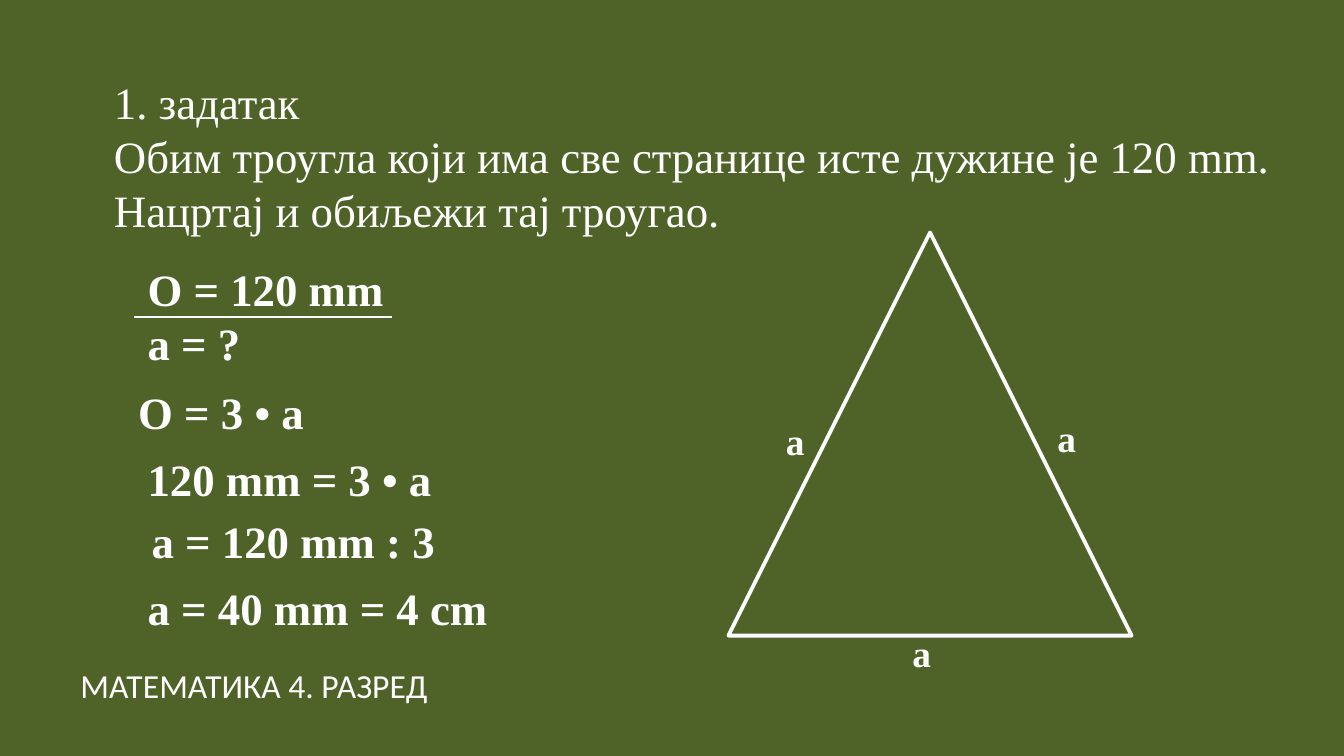
from dataclasses import dataclass

import pptx
import pptx.dml.color
import pptx.enum.shapes
import pptx.oxml.ns
import pptx.slide
import pptx.util
from lxml import etree

Inches = pptx.util.Inches
Pt = pptx.util.Pt
GREEN = pptx.dml.color.RGBColor(0x4F, 0x62, 0x28)
WHITE = pptx.dml.color.RGBColor(0xFF, 0xFF, 0xFF)


@dataclass(frozen=True)
class Note:
    left: float
    top: float
    width: float
    height: float
    lines: tuple[str, ...]
    size: int = 24
    bold: bool = True
    font: str = "Times New Roman"
    lead: float = 1.0


TASK = Note(
    0.75, 0.31, 8.83, 1.51,
    (
        "1. задатак",
        "Обим троугла који има све странице исте дужине је 120 mm. "
        "Нацртај и обиљежи тај троугао.",
    ),
    bold=False,
    lead=1.5,
)
GIVEN = Note(1, 1.9, 2.17, 0.91, ("O = 120 mm", "a = ?"))
STEPS = [
    Note(0.93, 2.81, 2.33, 0.5, ("O = 3 • a",)),
    Note(1, 3.31, 2.33, 0.5, ("120 mm = 3 • a",)),
    Note(1.03, 3.77, 2.5, 0.5, ("a = 120 mm : 3",)),
    Note(1, 4.27, 2.75, 0.5, ("a = 40 mm = 4 cm",)),
]
SIDES = [
    Note(left, top, 0.46, 0.44, ("a",), size=20)
    for left, top in ((5.75, 3.06), (7.77, 3.04), (6.69, 4.64))
]
FOOTER = Note(
    0.5, 4.9, 4.42, 0.42, ("МАТЕМАТИКА 4. РАЗРЕД",),
    size=18, bold=False, font="Calibri",
)


def add_notes(slide: pptx.slide.Slide, *notes: Note) -> None:
    for note in notes:
        box = slide.shapes.add_textbox(
            Inches(note.left), Inches(note.top),
            Inches(note.width), Inches(note.height),
        )
        frame = box.text_frame
        frame.word_wrap = True
        frame.text = "\n".join(note.lines)
        for para in frame.paragraphs:
            para.font.name = note.font
            para.font.size = Pt(note.size)
            para.font.bold = note.bold
            para.font.color.rgb = WHITE
        frame.paragraphs[0].line_spacing = note.lead


def add_rule(slide: pptx.slide.Slide, left: float, right: float, top: float) -> None:
    rule = slide.shapes.add_connector(
        pptx.enum.shapes.MSO_CONNECTOR.STRAIGHT,
        Inches(left), Inches(top), Inches(right), Inches(top),
    )
    rule.line.color.rgb = WHITE
    rule.line.width = Pt(0.75)
    etree.SubElement(rule._element.spPr, pptx.oxml.ns.qn("a:effectLst"))


def add_triangle(slide: pptx.slide.Slide, left: float, top: float, side: float) -> None:
    shape = slide.shapes.add_shape(
        pptx.enum.shapes.MSO_SHAPE.FLOWCHART_EXTRACT,
        Inches(left), Inches(top), Inches(side), Inches(side),
    )
    shape.shadow.inherit = False
    shape.fill.background()
    shape.line.color.rgb = WHITE
    shape.line.width = Pt(2)


def main() -> None:
    deck = pptx.Presentation()
    deck.slide_width = Inches(10)
    deck.slide_height = deck.slide_width * 9 // 16
    slide = deck.slides.add_slide(deck.slide_layouts[6])
    slide.background.fill.solid()
    slide.background.fill.fore_color.rgb = GREEN

    add_notes(slide, TASK, GIVEN)
    add_rule(slide, 1, 2.92, 2.36)
    add_notes(slide, *STEPS)
    add_triangle(slide, 5.42, 1.73, 3)
    add_notes(slide, *SIDES, FOOTER)
    deck.save("out.pptx")


if __name__ == "__main__":
    main()
